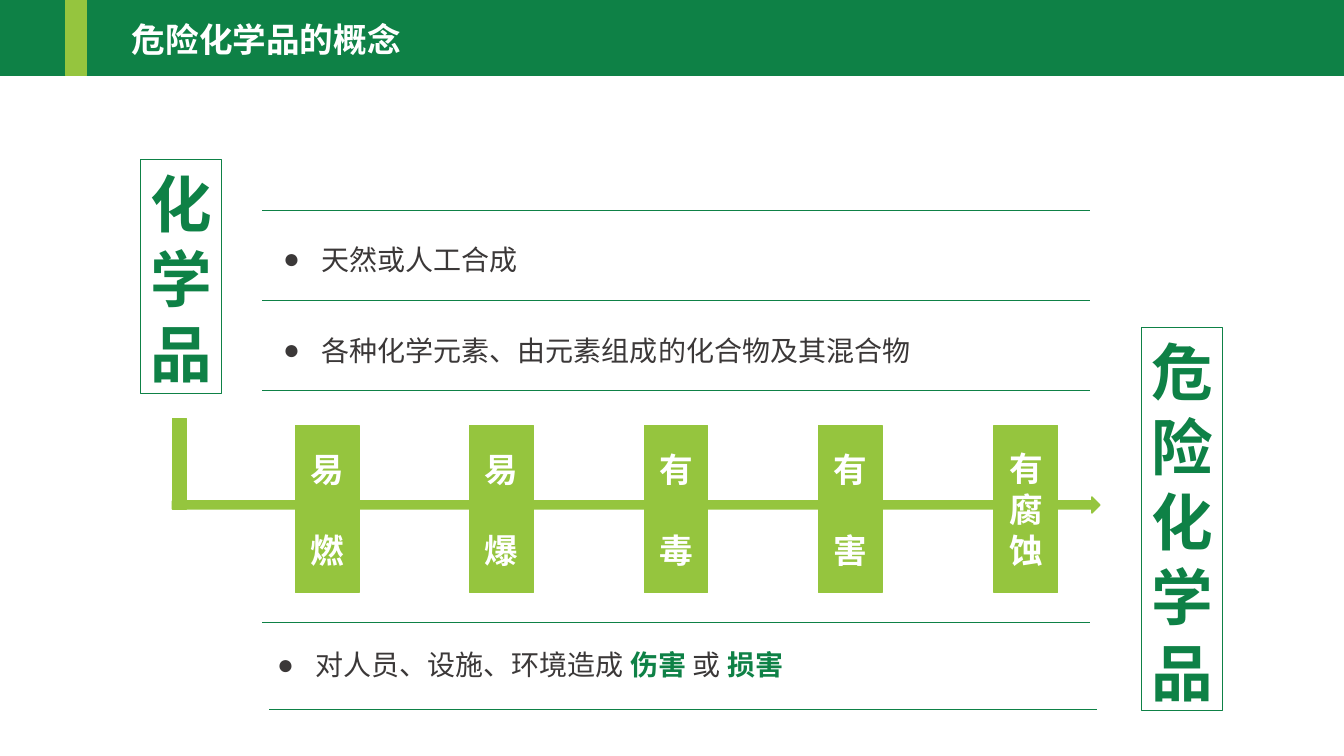
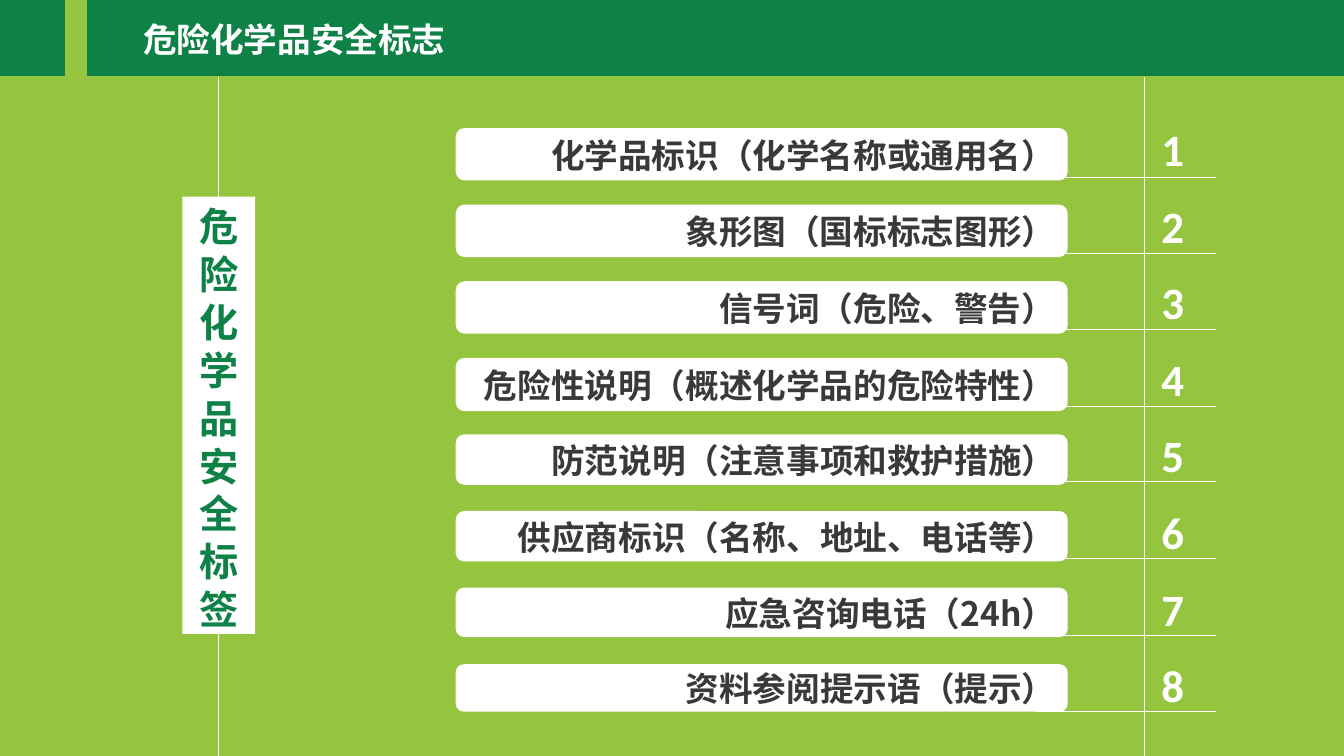
from lxml.etree import SubElement
from pptx import Presentation
from pptx.dml.color import RGBColor
from pptx.enum.shapes import MSO_CONNECTOR as Link, MSO_SHAPE as Kind
from pptx.enum.text import MSO_ANCHOR as Anchor, PP_ALIGN as Align
from pptx.oxml.ns import qn
from pptx.util import Pt

PX = 9144  # 100 px to the inch
GREEN = RGBColor(0x0E, 0x81, 0x46)
LIME = RGBColor(0x95, 0xC5, 0x3E)
WHITE = RGBColor(0xFF, 0xFF, 0xFF)
INK = RGBColor(0x3B, 0x38, 0x38)
SANS = "Noto Sans CJK SC"


def draw(slide, kind, box, fill=None, line=None, width=1):
    """Add a preset shape, or a text box when kind is None."""
    box = [v * PX for v in box]
    if kind is None:
        return slide.shapes.add_textbox(*box)
    shape = slide.shapes.add_shape(kind, *box)
    shape.shadow.inherit = False
    for part, color in ((shape.fill, fill), (shape.line.fill, line)):
        if color is None:
            part.background()
        else:
            part.solid()
            part.fore_color.rgb = color
    if line is not None:
        shape.line.width = Pt(width)
    return shape


def write(shape, text, size, color, bold=True, align=Align.LEFT,
          anchor=Anchor.TOP, face=SANS, bullet=False):
    """Fill a shape with one paragraph per line of text."""
    frame = shape.text_frame
    frame.word_wrap = True
    frame.vertical_anchor = anchor
    frame.text = text
    for para in frame.paragraphs:
        para.alignment = align
        para.line_spacing = Pt(round(size * 1.22, 1))
        if bullet:
            props = para._p.get_or_add_pPr()
            props.set("marL", str(38 * PX))
            props.set("indent", str(-38 * PX))
            SubElement(props, qn("a:buFont")).set("typeface", "Arial")
            SubElement(props, qn("a:buChar")).set("char", "●")
        font = para.font
        font.name, font.size, font.bold = face, Pt(size), bold
        font.color.rgb = color
        SubElement(font._element, qn("a:ea")).set("typeface", face)
    return frame


deck = Presentation()
deck.slide_width, deck.slide_height = 1333 * PX, 750 * PX

# Shared header: band, accent and title
pages = []
for title, left, back in (("危险化学品的概念", 121, WHITE),
                          ("危险化学品安全标志", 132, LIME)):
    page = deck.slides.add_slide(deck.slide_layouts[6])
    page.background.fill.solid()
    page.background.fill.fore_color.rgb = back
    draw(page, Kind.RECTANGLE, (0, 0, 1333, 75), GREEN, GREEN)
    draw(page, Kind.RECTANGLE, (65, -2, 21, 77), LIME, LIME)
    write(draw(page, None, (left, 13, 695, 50)), title, 24, WHITE,
          anchor=Anchor.MIDDLE)
    pages.append(page)
idea, label = pages

# Rules of both slides
rules = [(idea, (x, y, x + 821, y), GREEN)
         for x, y in ((260, 209), (260, 298), (260, 387), (260, 617), (267, 704))]
rules += [(label, (x, 76, x, 752), WHITE) for x in (217, 1135)]
rules += [(label, (1027, y, 1206, y), WHITE)
          for y in (176 + 530 * i // 7 for i in range(8))]
for page, ends, color in rules:
    rule = page.shapes.add_connector(Link.STRAIGHT, *[v * PX for v in ends])
    rule.line.color.rgb = color
    rule.line.width = Pt(0.5)
    SubElement(rule._element.spPr, qn("a:effectLst"))

# Concept: framed terms
for term, box in (("化学品", (139, 158, 81, 232)),
                  ("危险化学品", (1132, 325, 81, 380))):
    write(draw(idea, Kind.RECTANGLE, box, None, GREEN, 0.75), term, 44, GREEN)

# Concept: bullet lines
for text, x, y in (("天然或人工合成", 271, 235),
                   ("各种化学元素、由元素组成的化合物及其混合物", 271, 325),
                   ("对人员、设施、环境造成 ", 265, 637)):
    frame = write(draw(idea, None, (x, y, 800, 44)), text, 20, INK,
                  bold=False, bullet=True)
for text, strong in (("伤害", True), (" 或 ", False), ("损害", True)):
    run = frame.paragraphs[0].add_run()
    run.text = text
    if strong:
        run.font.bold = True
        run.font.color.rgb = GREEN

# Concept: arrow with five hazards
draw(idea, Kind.RIGHT_ARROW, (171, 493, 920, 16), LIME, LIME)
draw(idea, Kind.RECTANGLE, (171, 415, 14, 90), LIME, LIME)
for i, text in enumerate(("易\n燃", "易\n爆", "有\n毒", "有\n害", "有腐蚀")):
    bar = draw(idea, Kind.RECTANGLE, (293 + 693 * i // 4, 422, 63, 166), LIME, LIME)
    frame = write(bar, text, 24, WHITE, align=Align.CENTER, anchor=Anchor.MIDDLE)
    for para in frame.paragraphs[1:]:
        para.space_before = Pt(29)

# Label: numbered items
items = (("化学品标识（化学名称或通用名）", 52), ("象形图（国标标志图形）", 52),
         ("信号词（危险、警告）", 52), ("危险性说明（概述化学品的危险特性）", 53),
         ("防范说明（注意事项和救护措施）", 50), ("供应商标识（名称、地址、电话等）", 50),
         ("应急咨询电话（24h）", 49), ("资料参阅提示语（提示）", 47))
for i, (text, high) in enumerate(items):
    card = draw(label, Kind.ROUNDED_RECTANGLE, (452, 127 + 76 * i, 607, high), WHITE)
    write(card, text, 24, INK, align=Align.RIGHT, anchor=Anchor.MIDDLE)
    write(draw(label, None, (1142, 115 + 76 * i, 46, 64)), str(i + 1), 32, WHITE,
          face="Calibri")

# Label: upright name
write(draw(label, Kind.RECTANGLE, (181, 195, 72, 434), WHITE), "危险化学品安全标签",
      28, GREEN, align=Align.CENTER)

deck.save("out.pptx")
